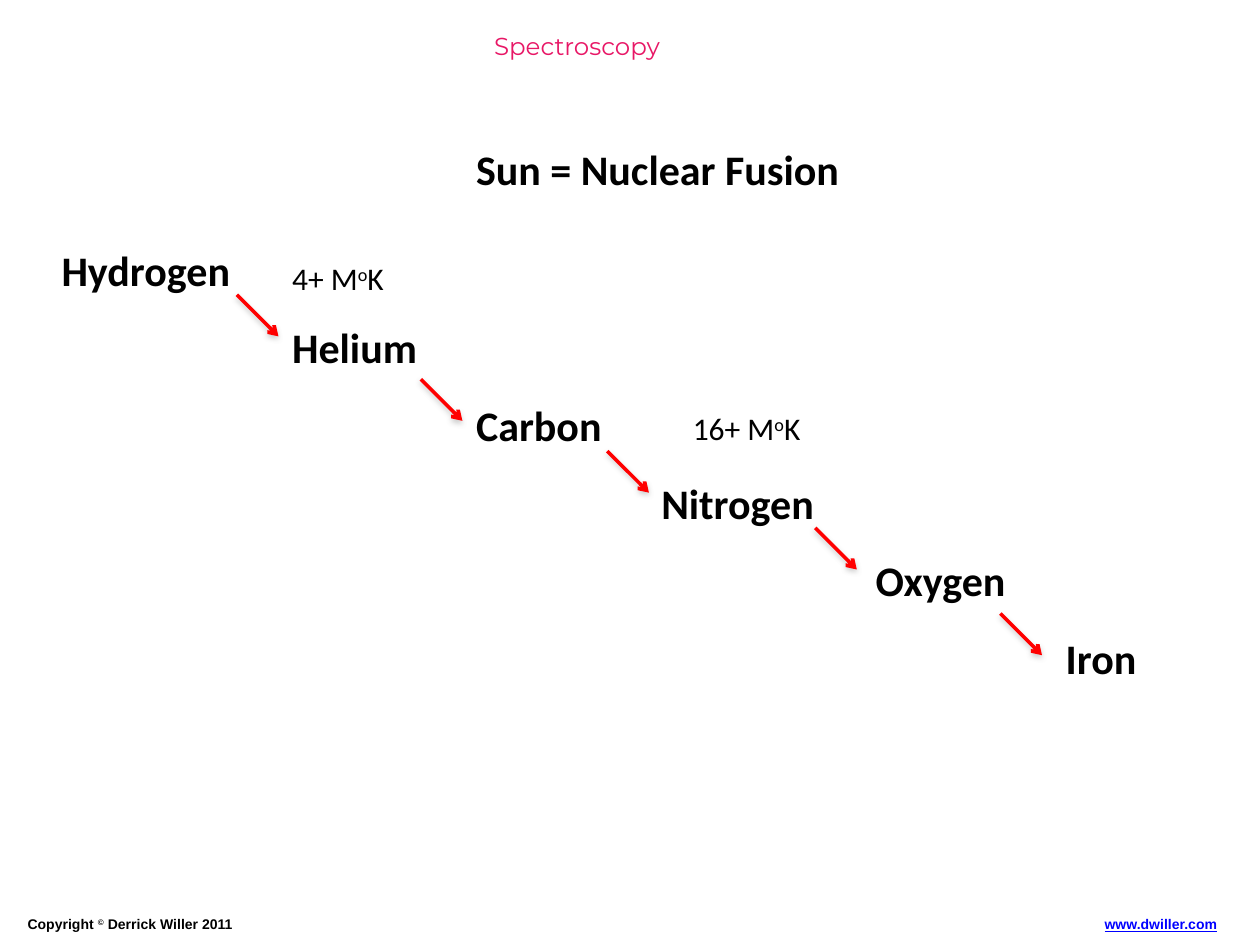
import pptx
import pptx.util
import pptx.dml.color
import pptx.enum.shapes
import pptx.enum.text
import pptx.oxml
import pptx.oxml.ns

COLORS = {"text": "000000", "title": "E81766", "link": "0000FF",
          "arrow": "FF0000", "shadow": "808080"}

TITLE = "Spectroscopy"
HEADING = "Sun = Nuclear Fusion"
ELEMENTS = [("Hydrogen", 0.39, 1.56), ("Helium", 2.22, 1.2), ("Carbon", 3.68, 1.21),
            ("Nitrogen", 5.15, 1.43), ("Oxygen", 6.85, 1.25), ("Iron", 8.36, 0.77)]
FIRST_TOP, LAST_TOP = 1.89, 4.97
ARROWS = [(1.88, 2.34), (3.34, 3.01), (4.82, 3.58), (6.47, 4.19), (7.94, 4.87)]
ARROW_SPAN = 0.33
TEMPERATURES = [("4+ M", 2.22, 2.01, 1.2), ("16+ M", 5.4, 3.2, 1.27)]
COPYRIGHT = [("Copyright ", False), ("©", True), (" Derrick Willer 2011", False)]
SITE = "www.dwiller.com"

Inches = pptx.util.Inches
ALIGN = pptx.enum.text.PP_ALIGN


def rgb(name):
    return pptx.dml.color.RGBColor.from_string(COLORS[name])


def add_text(s, box, runs, size, font="Calibri", color="text", bold=False,
             underline=None, align=ALIGN.LEFT, wrap=False):
    sp = s.shapes.add_textbox(*(Inches(v) for v in box))
    tf = sp.text_frame
    tf.word_wrap = wrap
    p = tf.paragraphs[0]
    p.alignment = align
    for text, raised in runs:
        r = p.add_run()
        r.text = text
        r.font.size = pptx.util.Pt(size)
        r.font.name = font
        r.font.bold = bold
        r.font.underline = underline
        r.font.color.rgb = rgb(color)
        if raised:
            r._r.get_or_add_rPr().set("baseline", "30000")


def add_arrow(s, x, y):
    line = s.shapes.add_connector(
        pptx.enum.shapes.MSO_CONNECTOR.STRAIGHT, Inches(x), Inches(y),
        Inches(x + ARROW_SPAN), Inches(y + ARROW_SPAN))
    line.line.color.rgb = rgb("arrow")
    line.line.width = pptx.util.Pt(2)
    ns = pptx.oxml.ns.nsdecls("a")
    line.line._get_or_add_ln().append(
        pptx.oxml.parse_xml(f'<a:tailEnd {ns} type="arrow"/>'))
    line._element.spPr.append(pptx.oxml.parse_xml(
        f'<a:effectLst {ns}><a:outerShdw blurRad="40000" dist="20000" dir="5400000" '
        f'rotWithShape="0"><a:srgbClr val="{COLORS["shadow"]}"><a:alpha val="38000"/>'
        '</a:srgbClr></a:outerShdw></a:effectLst>'))


def main():
    prs = pptx.Presentation()
    prs.slide_width, prs.slide_height = Inches(10), Inches(7.5)
    s = prs.slides.add_slide(prs.slide_layouts[6])

    add_text(s, (0.12, 7.22, 5.65, 0.24), COPYRIGHT, 8, "Arial", bold=True, wrap=True)
    add_text(s, (8.42, 7.22, 1.34, 0.24), [(SITE, False)], 8, "Arial", "link",
             bold=True, underline=True, align=ALIGN.RIGHT, wrap=True)
    add_text(s, (3.59, 0.2, 1.98, 0.58), [(TITLE, False)], 14, "Montserrat", "title",
             align=ALIGN.CENTER)
    add_text(s, (3.68, 1.09, 3.11, 0.51), [(HEADING, False)], 24, bold=True)

    step = (LAST_TOP - FIRST_TOP) / (len(ELEMENTS) - 1)
    for i, (name, left, width) in enumerate(ELEMENTS):
        add_text(s, (left, FIRST_TOP + i * step, width, 0.51), [(name, False)], 24,
                 bold=True)
    for x, y in ARROWS:
        add_arrow(s, x, y)
    for value, left, top, width in TEMPERATURES:
        add_text(s, (left, top, width, 0.4),
                 [(value, False), ("o", True), ("K", False)], 18, wrap=True)

    prs.save("out.pptx")


if __name__ == "__main__":
    main()
